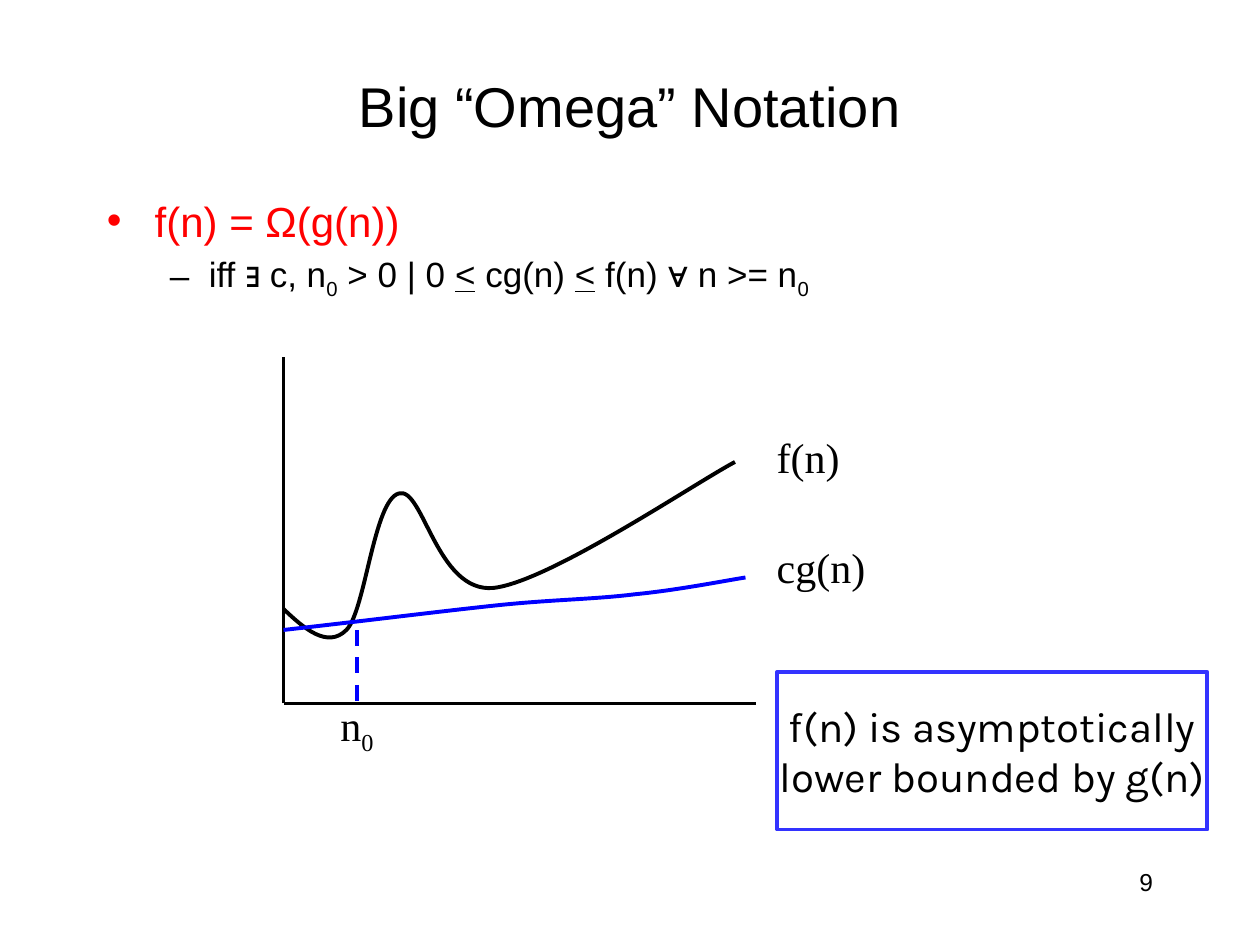
"""Build a slide that explains Big Omega notation with a sketch of two growth curves."""

from dataclasses import dataclass

import lxml.etree
import pptx
import pptx.dml.color
import pptx.enum.dml
import pptx.enum.shapes
import pptx.enum.text
import pptx.oxml.ns
import pptx.util

COLUMNS, ROWS = 120, 90
Point = tuple[float, float]
ALIGN = pptx.enum.text.PP_ALIGN
ANCHOR = pptx.enum.text.MSO_ANCHOR


@dataclass(frozen=True)
class Theme:
    ink: str = "000000"
    accent: str = "FF0000"
    curve: str = "0000FF"
    frame: str = "3333FF"
    sans: str = "Arial"
    serif: str = "Times New Roman"
    callout: str = "Karla"
    title_size: int = 32
    text_size: int = 24
    detail_size: int = 20
    number_size: int = 14
    stroke: float = 2.25


THEME = Theme()


@dataclass(frozen=True)
class Span:
    text: str
    subscript: bool = False
    underline: bool = False


@dataclass(frozen=True)
class Style:
    font: str = THEME.sans
    size: int = THEME.text_size
    color: str = THEME.ink
    align: ALIGN = ALIGN.LEFT


@dataclass(frozen=True)
class Area:
    column: float
    row: float
    columns: float
    rows: float


@dataclass(frozen=True)
class Label:
    area: Area
    spans: tuple[Span, ...]


@dataclass(frozen=True)
class Bullet:
    symbol: str
    level: int
    margin: float
    hanging: float
    style: Style
    spans: tuple[Span, ...]


@dataclass(frozen=True)
class Line:
    start: Point
    end: Point
    color: str = THEME.ink
    dashed: bool = False


@dataclass(frozen=True)
class Curve:
    color: str
    points: tuple[Point, ...]


ZERO = Span("0", subscript=True)
AT_MOST = Span("<", underline=True)
SERIF = Style(font=THEME.serif)
BULLETS = (
    Bullet("•", 0, 0.38, 0.38, Style(color=THEME.accent), (Span("f(n) = Ω(g(n))"),)),
    Bullet("–", 1, 0.81, 0.31, Style(size=THEME.detail_size), (
        Span("iff ∃ c, n"), ZERO, Span(" > 0 | 0 "), AT_MOST, Span(" cg(n) "),
        AT_MOST, Span(" f(n) ∀ n >= n"), ZERO)),
)
ORIGIN = (27, 67)
LINES = (
    Line(ORIGIN, (72, 67)),
    Line(ORIGIN, (27, 34)),
    Line((34, 60), (34, 67), THEME.curve, dashed=True),
)
CURVES = (
    Curve(THEME.ink, (
        (27, 58), (29, 59.9), (31.2, 61.8), (33, 60), (34.8, 58.2), (35.6, 47.6), (38, 47),
        (40.3, 46.3), (41.6, 56.5), (47, 56), (52.3, 55.4), (65.9, 46.2), (70, 44))),
    Curve(THEME.curve, (
        (27, 60), (34.2, 59.2), (41.3, 58.3), (46.9, 57.7), (52.4, 57.1),
        (56.5, 57.1), (60.5, 56.6), (64.6, 56.2), (69.1, 55.3), (71, 55))),
)
LABELS = (
    Label(Area(72.8, 40.5, 8.4, 6), (Span("f(n)"),)),
    Label(Area(72.8, 51, 10.8, 6), (Span("cg(n)"),)),
    Label(Area(31.25, 66, 5.8, 6), (Span("n"), ZERO)),
)
CALLOUT_LINES = ("f(n) is asymptotically", "lower bounded by g(n)")


def grid(value: float) -> int:
    return round(pptx.util.Inches(10) * value / COLUMNS)


def bounds(area: Area) -> tuple[int, int, int, int]:
    return grid(area.column), grid(area.row), grid(area.columns), grid(area.rows)


def rgb(color: str) -> pptx.dml.color.RGBColor:
    return pptx.dml.color.RGBColor.from_string(color)


def write(para, spans: tuple[Span, ...], style: Style) -> None:
    para.alignment = style.align
    for item in spans:
        span = para.add_run()
        span.text = item.text
        span.font.name = style.font
        span.font.size = pptx.util.Pt(style.size)
        span.font.color.rgb = rgb(style.color)
        if item.underline:
            span.font.underline = True
        if item.subscript:
            span.font._element.set("baseline", "-25000")


def stroke(line, color: str) -> None:
    line.color.rgb = rgb(color)
    line.width = pptx.util.Pt(THEME.stroke)


def add_text(page, area: Area, spans: tuple[Span, ...], style: Style, wrap: bool) -> None:
    box = page.shapes.add_textbox(*bounds(area))
    box.text_frame.word_wrap = wrap
    if not wrap:
        box.text_frame.auto_size = pptx.enum.text.MSO_AUTO_SIZE.SHAPE_TO_FIT_TEXT
    write(box.text_frame.paragraphs[0], spans, style)


def add_title(page, text: str) -> None:
    title = page.shapes.title
    title.left, title.top, title.width, title.height = bounds(Area(9, 5, 102, 10))
    title.text_frame.vertical_anchor = ANCHOR.MIDDLE
    style = Style(size=THEME.title_size, align=ALIGN.CENTER)
    write(title.text_frame.paragraphs[0], (Span(text),), style)


def add_bullets(page, area: Area, bullets: tuple[Bullet, ...]) -> None:
    frame = page.shapes.add_textbox(*bounds(area)).text_frame
    frame.word_wrap = True
    for index, bullet in enumerate(bullets):
        para = frame.add_paragraph() if index else frame.paragraphs[0]
        para.level = bullet.level
        para.space_before = pptx.util.Pt(bullet.style.size * 0.2)
        write(para, bullet.spans, bullet.style)
        properties = para._p.get_or_add_pPr()
        properties.set("marL", str(pptx.util.Inches(bullet.margin)))
        properties.set("indent", str(-pptx.util.Inches(bullet.hanging)))
        font = lxml.etree.SubElement(properties, pptx.oxml.ns.qn("a:buFont"))
        font.set("typeface", THEME.sans)
        mark = lxml.etree.SubElement(properties, pptx.oxml.ns.qn("a:buChar"))
        mark.set("char", bullet.symbol)


def add_line(page, line: Line) -> None:
    ends = [grid(value) for value in (*line.start, *line.end)]
    connector = page.shapes.add_connector(pptx.enum.shapes.MSO_CONNECTOR.STRAIGHT, *ends)
    stroke(connector.line, line.color)
    if line.dashed:
        connector.line.dash_style = pptx.enum.dml.MSO_LINE.DASH
    lxml.etree.SubElement(connector._element.spPr, pptx.oxml.ns.qn("a:effectLst"))


def bend(shape) -> None:
    """Turn every three straight segments of the outline into one cubic curve."""
    segments = list(shape._element.iter(pptx.oxml.ns.qn("a:lnTo")))
    outline = segments[0].getparent()
    for first in range(0, len(segments), 3):
        cubic = lxml.etree.SubElement(outline, pptx.oxml.ns.qn("a:cubicBezTo"))
        for segment in segments[first:first + 3]:
            cubic.append(segment[0])
            outline.remove(segment)


def add_curve(page, curve: Curve) -> None:
    start, *controls = [(grid(x), grid(y)) for x, y in curve.points]
    builder = page.shapes.build_freeform(*start)
    builder.add_line_segments(controls, close=False)
    shape = builder.convert_to_shape()
    bend(shape)
    shape.shadow.inherit = False
    shape.fill.background()
    stroke(shape.line, curve.color)


def add_callout(page, area: Area, lines: tuple[str, ...]) -> None:
    box = page.shapes.add_shape(pptx.enum.shapes.MSO_SHAPE.RECTANGLE, *bounds(area))
    box.shadow.inherit = False
    box.fill.background()
    stroke(box.line, THEME.frame)
    frame = box.text_frame
    frame.word_wrap = False
    frame.vertical_anchor = ANCHOR.MIDDLE
    style = Style(font=THEME.callout, align=ALIGN.CENTER)
    for index, text in enumerate(lines):
        para = frame.add_paragraph() if index else frame.paragraphs[0]
        write(para, (Span(text),), style)


def main() -> None:
    deck = pptx.Presentation()
    deck.slide_width, deck.slide_height = grid(COLUMNS), grid(ROWS)
    page = deck.slides.add_slide(deck.slide_layouts.get_by_name("Title Only"))
    add_title(page, "Big “Omega” Notation")
    number_style = Style(size=THEME.number_size, align=ALIGN.RIGHT)
    add_text(page, Area(86, 82, 25, 6), (Span("9"),), number_style, wrap=True)
    add_bullets(page, Area(9, 18, 102, 62), BULLETS)
    for line in LINES:
        add_line(page, line)
    for curve in CURVES:
        add_curve(page, curve)
    for label in LABELS:
        add_text(page, label.area, label.spans, SERIF, wrap=False)
    add_callout(page, Area(74, 64, 41, 15), CALLOUT_LINES)
    deck.save("out.pptx")


if __name__ == "__main__":
    main()
